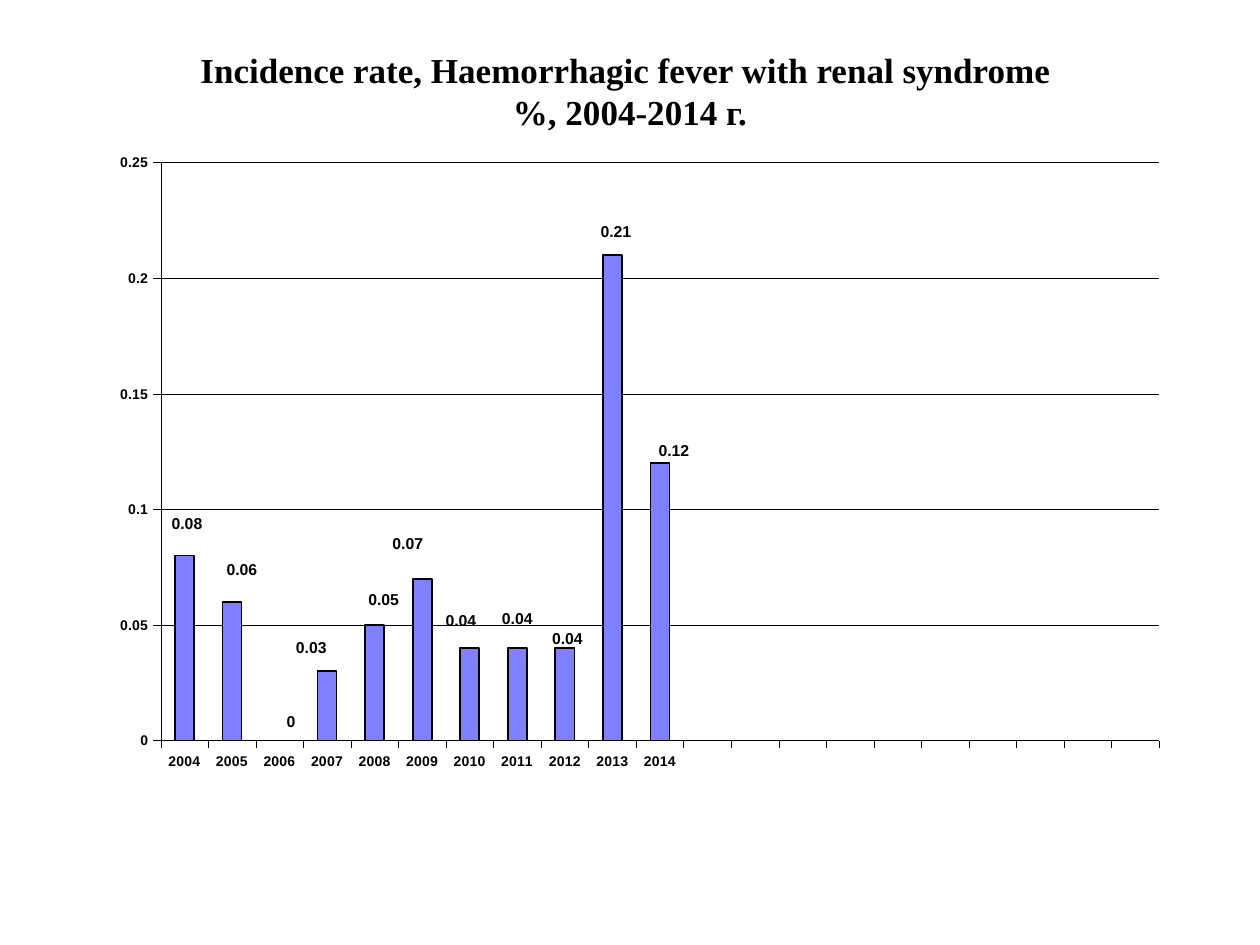
from dataclasses import dataclass
from typing import Any, NamedTuple

from lxml import etree
from pptx import Presentation
from pptx.chart.data import CategoryChartData
from pptx.dml.color import RGBColor
from pptx.enum.chart import XL_CHART_TYPE, XL_LABEL_POSITION, XL_TICK_LABEL_POSITION, XL_TICK_MARK
from pptx.enum.text import MSO_ANCHOR, PP_ALIGN
from pptx.oxml.ns import qn
from pptx.util import Cm, Pt

COLUMN_CLUSTERED = XL_CHART_TYPE.COLUMN_CLUSTERED
OUTSIDE_END = XL_LABEL_POSITION.OUTSIDE_END
LOW = XL_TICK_LABEL_POSITION.LOW
OUTSIDE, NO_TICK = XL_TICK_MARK.OUTSIDE, XL_TICK_MARK.NONE
MIDDLE, CENTER = MSO_ANCHOR.MIDDLE, PP_ALIGN.CENTER
TITLE_ONLY = 5


@dataclass(frozen=True)
class Theme:
    ink: RGBColor = RGBColor(0, 0, 0)
    bar: RGBColor = RGBColor(0x80, 0x80, 0xFF)
    title_font: str = "Times New Roman"
    chart_font: str = "Arial"
    title_size: int = 20
    axis_size: int = 8
    label_size: int = 9
    thin_line: float = 0.25
    bar_line: float = 1


class Box(NamedTuple):
    left: float
    top: float
    width: float
    height: float


class Incidence(NamedTuple):
    year: str
    rate: float
    label_right: float
    label_down: float


THEME = Theme()
TITLE_BOX = Box(1.9, 1.12, 21.6, 1.4)
CHART_BOX = Box(2.11, 3.12, 21.41, 13)
PLOT_BOX = Box(1.13, 0.15, 20.13, 11.66)
INCIDENCES = (
    Incidence("2004", 0.08, 0.05, -0.35),
    Incidence("2005", 0.06, 0.2, -0.35),
    Incidence("2006", 0, 0.23, -0.08),
    Incidence("2007", 0.03, -0.32, -0.18),
    Incidence("2008", 0.05, 0.18, -0.22),
    Incidence("2009", 0.07, -0.29, -0.42),
    Incidence("2010", 0.04, -0.18, -0.26),
    Incidence("2011", 0.04, 0, -0.29),
    Incidence("2012", 0.04, 0.05, 0.1),
    Incidence("2013", 0.21, 0.07, -0.18),
    Incidence("2014", 0.12, 0.28, 0.04),
)
EMPTY_YEARS = 10


def apply_format(target: Any, values: dict[str, Any]) -> None:
    for name, value in values.items():
        setattr(target, name, value)


def format_font(font: Any, name: str, size: int) -> None:
    apply_format(font, {"name": name, "size": Pt(size), "bold": True})
    font.color.rgb = THEME.ink


def format_line(line: Any, width: float) -> None:
    line.width = Pt(width)
    line.color.rgb = THEME.ink


def build_layout(values: dict[str, Any]) -> Any:
    layout = etree.Element(qn("c:layout"))
    manual = etree.SubElement(layout, qn("c:manualLayout"))
    for name, value in values.items():
        etree.SubElement(manual, qn(f"c:{name}")).set("val", str(value))
    return layout


def chart_fractions(right: float, down: float) -> dict[str, float]:
    return {"x": right / CHART_BOX.width, "y": down / CHART_BOX.height}


def add_title(slide: Any) -> None:
    title = slide.shapes.title
    apply_format(title, {name: Cm(length) for name, length in TITLE_BOX._asdict().items()})
    frame = title.text_frame
    apply_format(frame, {"word_wrap": True, "vertical_anchor": MIDDLE})
    frame.text = "Incidence rate, Haemorrhagic fever with renal syndrome \v%, 2004-2014 г."
    paragraph = frame.paragraphs[0]
    paragraph.alignment = CENTER
    for run in paragraph.runs:
        format_font(run.font, THEME.title_font, THEME.title_size)


def place_plot(chart: Any) -> None:
    plot_area = chart._chartSpace.chart.plotArea
    for automatic_layout in plot_area.findall(qn("c:layout")):
        plot_area.remove(automatic_layout)
    size = chart_fractions(PLOT_BOX.width, PLOT_BOX.height)
    plot_area.insert(0, build_layout({
        "layoutTarget": "inner", "xMode": "edge", "yMode": "edge",
        **chart_fractions(PLOT_BOX.left, PLOT_BOX.top),
        "w": size["x"], "h": size["y"],
    }))


def format_axes(chart: Any) -> None:
    for axis in (chart.category_axis, chart.value_axis):
        apply_format(axis, {"major_tick_mark": OUTSIDE, "minor_tick_mark": NO_TICK})
        format_font(axis.tick_labels.font, THEME.chart_font, THEME.axis_size)
        format_line(axis.format.line, THEME.thin_line)
    chart.category_axis.tick_label_position = LOW
    apply_format(chart.value_axis, {"minimum_scale": 0, "maximum_scale": 0.25, "major_unit": 0.05})
    format_line(chart.value_axis.major_gridlines.format.line, THEME.thin_line)


def format_bars(plot: Any) -> None:
    apply_format(plot, {"gap_width": 150, "vary_by_categories": False})
    bar_format = plot.series[0].format
    bar_format.fill.solid()
    bar_format.fill.fore_color.rgb = THEME.bar
    format_line(bar_format.line, THEME.bar_line)


def hide_leader_lines(labels_element: Any) -> None:
    tag = qn("c:showLeaderLines")
    for setting in labels_element.findall(tag):
        labels_element.remove(setting)
    etree.SubElement(labels_element, tag).set("val", "0")


def add_rate_labels(series: Any) -> None:
    series_labels = series.data_labels
    apply_format(series_labels, {
        "show_value": True, "number_format": "General", "number_format_is_linked": False,
    })
    point_labels = [series.points[index].data_label for index in range(len(INCIDENCES))]
    for label in (series_labels, *point_labels):
        label.position = OUTSIDE_END
        format_font(label.font, THEME.chart_font, THEME.label_size)

    labels_element = series._element.find(qn("c:dLbls"))
    hide_leader_lines(labels_element)
    for label_element, incidence in zip(labels_element.findall(qn("c:dLbl")), INCIDENCES):
        shift = chart_fractions(incidence.label_right, incidence.label_down)
        label_element.find(qn("c:idx")).addnext(build_layout(shift))


def add_incidence_chart(slide: Any) -> None:
    data = CategoryChartData()
    data.categories = [incidence.year for incidence in INCIDENCES] + [""] * EMPTY_YEARS
    data.add_series("Series 1", [incidence.rate for incidence in INCIDENCES] + [None] * EMPTY_YEARS)
    place = [Cm(length) for length in CHART_BOX]
    chart = slide.shapes.add_chart(COLUMN_CLUSTERED, *place, data).chart
    apply_format(chart, {"has_legend": False, "has_title": False})
    format_font(chart.font, THEME.chart_font, THEME.axis_size)
    place_plot(chart)
    format_axes(chart)
    plot = chart.plots[0]
    format_bars(plot)
    add_rate_labels(plot.series[0])


def main() -> None:
    presentation = Presentation()
    apply_format(presentation, {"slide_width": Cm(25.4), "slide_height": Cm(19.05)})
    slide = presentation.slides.add_slide(presentation.slide_layouts[TITLE_ONLY])
    add_title(slide)
    add_incidence_chart(slide)
    presentation.save("out.pptx")


if __name__ == "__main__":
    main()
